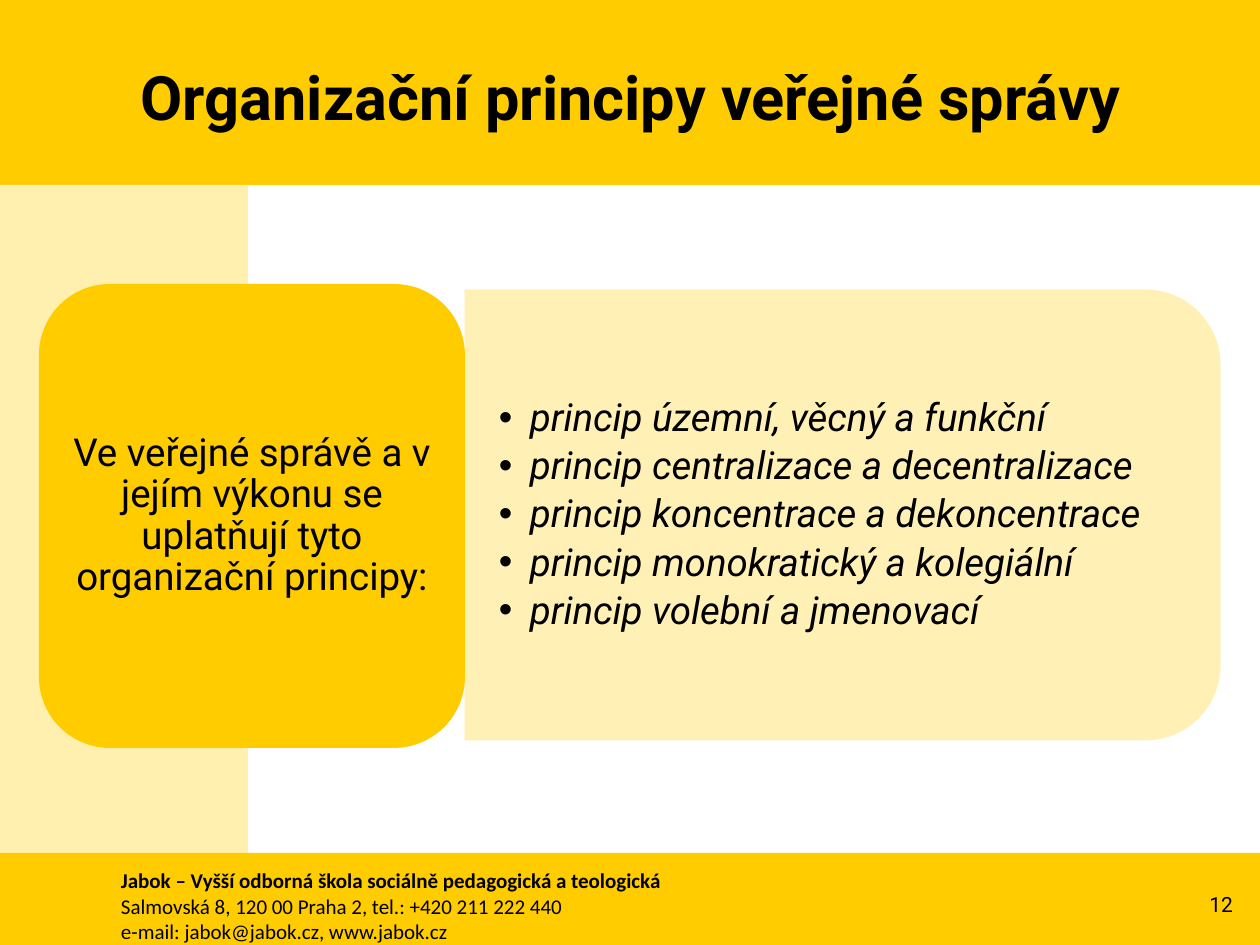
from typing import NamedTuple

from lxml import etree
from pptx import Presentation
from pptx import util as u
from pptx.dml.color import RGBColor
from pptx.enum import shapes, text
from pptx.oxml.ns import qn

GOLD = RGBColor(0xFF, 0xCC, 0x00)
CREAM = RGBColor(0xFF, 0xF0, 0xAF)
BLACK = RGBColor(0, 0, 0)
SCALE = u.Inches(1) / 126

Kind = shapes.MSO_SHAPE
Align = text.PP_ALIGN
Anchor = text.MSO_ANCHOR


class Box(NamedTuple):
    left: int
    top: int
    width: int
    height: int


class Panel(NamedTuple):
    box: Box
    fill: RGBColor
    kind: Kind = Kind.RECTANGLE
    turn: int = 0
    alpha: int = 100


PANELS = [
    Panel(Box(0, 0, 1260, 185), GOLD),
    Panel(Box(0, 185, 248, 760), CREAM),
    Panel(Box(0, 853, 1260, 92), GOLD),
    Panel(Box(617, 137, 451, 756), CREAM, Kind.ROUND_2_SAME_RECTANGLE, 90, 90),
    Panel(Box(39, 284, 426, 464), GOLD, Kind.ROUNDED_RECTANGLE),
]

TITLE = "Organizační principy veřejné správy"
LEAD = "Ve veřejné správě a v jejím výkonu se uplatňují tyto organizační principy:"
RULES = [
    "princip územní, věcný a funkční",
    "princip centralizace a decentralizace",
    "princip koncentrace a dekoncentrace",
    "princip monokratický a kolegiální",
    "princip volební a jmenovací",
]
SCHOOL = [
    "Jabok – Vyšší odborná škola sociálně pedagogická a teologická",
    "Salmovská 8, 120 00 Praha 2, tel.: +420 211 222 440",
    "e-mail: jabok@jabok.cz, www.jabok.cz",
]


def px(size: int) -> u.Emu:
    return u.Emu(round(size * SCALE))


def draw(slide, panel: Panel) -> None:
    shape = slide.shapes.add_shape(panel.kind, *map(px, panel.box))
    shape.rotation = panel.turn
    shape.shadow.inherit = False
    shape.fill.solid()
    shape.fill.fore_color.rgb = panel.fill
    shape.line.fill.background()
    if panel.alpha < 100:
        color = shape.element.spPr.find(".//" + qn("a:srgbClr"))
        etree.SubElement(color, qn("a:alpha"), val=str(panel.alpha * 1000))


def place(shape, box: Box) -> None:
    """Move a placeholder to its box and in front of all earlier shapes."""
    shape.left, shape.top, shape.width, shape.height = map(px, box)
    shape.element.getparent().append(shape.element)


def bullet(para, indent: int) -> None:
    para.level = 1
    props = para._p.get_or_add_pPr()
    props.set("marL", str(px(indent)))
    props.set("indent", str(-px(indent)))
    etree.SubElement(props, qn("a:buChar"), char="•")


def write(shape, lines: list[str], *, size: int, font: str = "Roboto",
          bold: tuple[int, ...] = (), italic: bool = False,
          align: Align = Align.LEFT, anchor: Anchor = Anchor.MIDDLE,
          pad: tuple[int, int] = (13, 6), indent: int = 0,
          spacing: float = 1.0, after: float = 0) -> None:
    """Fill a shape with paragraphs; bold lists the indexes of bold lines."""
    frame = shape.text_frame
    frame.word_wrap = True
    frame.auto_size = text.MSO_AUTO_SIZE.NONE
    frame.vertical_anchor = anchor
    frame.margin_left = frame.margin_right = px(pad[0])
    frame.margin_top = frame.margin_bottom = px(pad[1])
    for num, line in enumerate(lines):
        para = frame.add_paragraph() if num else frame.paragraphs[0]
        if indent:
            bullet(para, indent)
        para.alignment = align
        para.line_spacing = spacing
        para.space_before = u.Pt(0)
        para.space_after = u.Pt(after if num < len(lines) - 1 else 0)
        run = para.add_run()
        run.text = line
        run.font.name = font
        run.font.size = u.Pt(size)
        run.font.bold = num in bold
        run.font.italic = italic
        run.font.color.rgb = BLACK


def label(slide, box: Box):
    return slide.shapes.add_textbox(*map(px, box))


def main() -> None:
    deck = Presentation()
    deck.slide_width, deck.slide_height = px(1260), px(945)
    slide = deck.slides.add_slide(deck.slide_layouts[1])
    title, body = slide.placeholders

    for panel in PANELS:
        draw(slide, panel)

    write(label(slide, Box(108, 862, 1032, 89)), SCHOOL, size=12,
          font="Calibri", bold=(0,), anchor=Anchor.TOP)
    write(label(slide, Box(1167, 879, 79, 50)), ["12"], size=12,
          align=Align.RIGHT)

    place(title, Box(64, 18, 1134, 157))
    write(title, [TITLE], size=35, bold=(0,), align=Align.CENTER)

    place(body, Box(465, 312, 735, 407))
    write(body, RULES, size=22, italic=True, pad=(34, 18), indent=31,
          spacing=0.9, after=3.8)

    write(label(slide, Box(60, 305, 384, 422)), [LEAD], size=22,
          align=Align.CENTER, pad=(11, 6), spacing=0.9)

    deck.save("out.pptx")


if __name__ == "__main__":
    main()
